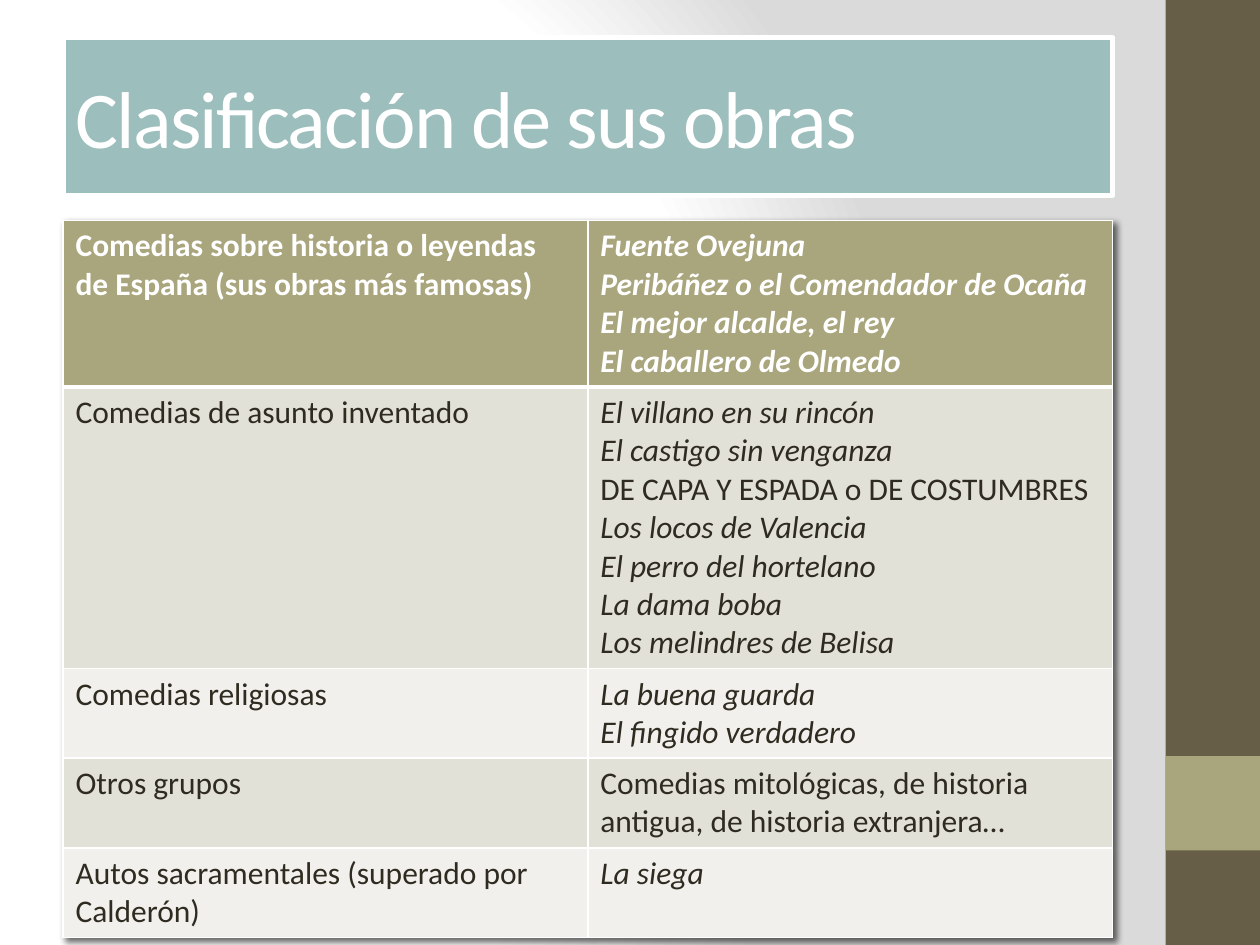
from lxml.etree import SubElement
from pptx import Presentation
from pptx.dml.color import RGBColor
from pptx.enum.shapes import MSO_SHAPE
from pptx.enum.text import MSO_ANCHOR, PP_ALIGN
from pptx.oxml import parse_xml
from pptx.oxml.ns import nsdecls, qn
from pptx.util import Inches, Pt

WHITE, INK, OLIVE, BROWN, TEAL = "FFFFFF", "2F2B20", "A9A57C", "675E47", "9CBEBD"
BANDS = ["E2E1D7", "F1F0EC"]
LINE_HEIGHT, CELL_PADDING = 0.3, 0.1

# Each row: lines it needs, category, works as (text, italic)
ROWS = [
    (4, "Comedias sobre historia o leyendas de España (sus obras más famosas)",
     [("Fuente Ovejuna", True),
      ("Peribáñez o el Comendador de Ocaña", True),
      ("El mejor alcalde, el rey", True),
      ("El caballero de Olmedo", True)]),
    (7, "Comedias de asunto inventado",
     [("El villano en su rincón", True),
      ("El castigo sin venganza", True),
      ("DE CAPA Y ESPADA o DE COSTUMBRES", False),
      ("Los locos de Valencia", True),
      ("El perro del hortelano", True),
      ("La dama boba", True),
      ("Los melindres de Belisa", True)]),
    (2, "Comedias religiosas",
     [("La buena guarda", True), ("El fingido verdadero", True)]),
    (2, "Otros grupos",
     [("Comedias mitológicas, de historia antigua, de historia extranjera…", False)]),
    (2, "Autos sacramentales (superado por Calderón)",
     [("La siega", True)]),
]


def color(value):
    return RGBColor.from_string(value)


def paint(part, value):
    part.fill.solid()
    part.fill.fore_color.rgb = color(value)


def add_span(para, text, ink, **font_values):
    span = para.add_run()
    span.text = text
    span.font.color.rgb = color(ink)
    for name, value in {"name": "Calibri", **font_values}.items():
        setattr(span.font, name, value)
    return span


def add_background(page):
    stops = "".join(f'<a:gs pos="{pos}000"><a:srgbClr val="{value}"/></a:gs>'
                    for pos, value in [(0, WHITE), (75, WHITE), (100, "DADADA")])
    page.element.cSld.insert(0, parse_xml(
        f'<p:bg {nsdecls("p", "a")}><p:bgPr><a:gradFill rotWithShape="1">'
        f'<a:gsLst>{stops}</a:gsLst><a:path path="circle">'
        '<a:fillToRect l="20000" t="50000" r="100000" b="50000"/></a:path>'
        '</a:gradFill><a:effectLst/></p:bgPr></p:bg>'))


def add_side_bar(page, left, top, width, height):
    # Full-height strip with a square accent
    for y, tall, value in [(top, height, BROWN), (Inches(6), width, OLIVE)]:
        strip = page.shapes.add_shape(MSO_SHAPE.RECTANGLE, left, y, width, tall)
        strip.shadow.inherit = False
        paint(strip, value)
        strip.line.fill.background()


def place_title(page, left, top, width, height):
    title = page.shapes.title
    box = {"left": left, "top": top, "width": width, "height": height}
    for name, value in box.items():
        setattr(title, name, value)
    paint(title, TEAL)
    title.line.color.rgb = color(WHITE)
    title.line.width = Pt(3)
    frame = title.text_frame
    frame.vertical_anchor = MSO_ANCHOR.MIDDLE
    para = frame.paragraphs[0]
    para.alignment = PP_ALIGN.LEFT
    span = add_span(para, "Clasificación de sus obras", WHITE, size=Pt(46))
    span.font._element.set("spc", "-100")


def add_borders(cell, top, bottom):
    properties = cell._tc.get_or_add_tcPr()
    for side, points in {"L": 1, "R": 1, "T": top, "B": bottom}.items():
        line = SubElement(properties, qn(f"a:ln{side}"), w=str(Pt(points)))
        fill = SubElement(line, qn("a:solidFill"))
        SubElement(fill, qn("a:srgbClr"), val=WHITE)


def fill_cell(cell, lines, ink, bold):
    frame = cell.text_frame
    for index, (text, italic) in enumerate(lines):
        para = frame.add_paragraph() if index else frame.paragraphs[0]
        add_span(para, text, ink, size=Pt(18), bold=bold, italic=italic)


def add_works_table(page, left, top, width, height):
    table = page.shapes.add_table(len(ROWS), 2, left, top, width, height).table
    table._tbl.tblPr.insert(0, parse_xml(
        f'<a:effectLst {nsdecls("a")}><a:outerShdw blurRad="50800" dist="38100" '
        'dir="2700000" algn="tl" rotWithShape="0"><a:srgbClr val="000000">'
        '<a:alpha val="60000"/></a:srgbClr></a:outerShdw></a:effectLst>'))
    for index, (line_count, category, works) in enumerate(ROWS):
        header = index == 0
        table.rows[index].height = Inches(CELL_PADDING + LINE_HEIGHT * line_count)
        for column, lines in enumerate([[(category, False)], works]):
            cell = table.cell(index, column)
            add_borders(cell, 3 if index == 1 else 1, 3 if header else 1)
            paint(cell, OLIVE if header else BANDS[(index - 1) % 2])
            fill_cell(cell, lines, WHITE if header else INK, header)


def main():
    deck = Presentation()
    deck.slide_width, deck.slide_height = Inches(10), Inches(7.5)
    page = deck.slides.add_slide(deck.slide_layouts[5])
    add_background(page)
    add_side_bar(page, Inches(9.25), 0, Inches(0.75), deck.slide_height)
    place_title(page, Inches(0.5), Inches(0.3), Inches(8.33), Inches(1.25))
    add_works_table(page, Inches(0.5), Inches(1.75), Inches(8.33), Inches(5.6))
    deck.save("out.pptx")


if __name__ == "__main__":
    main()
